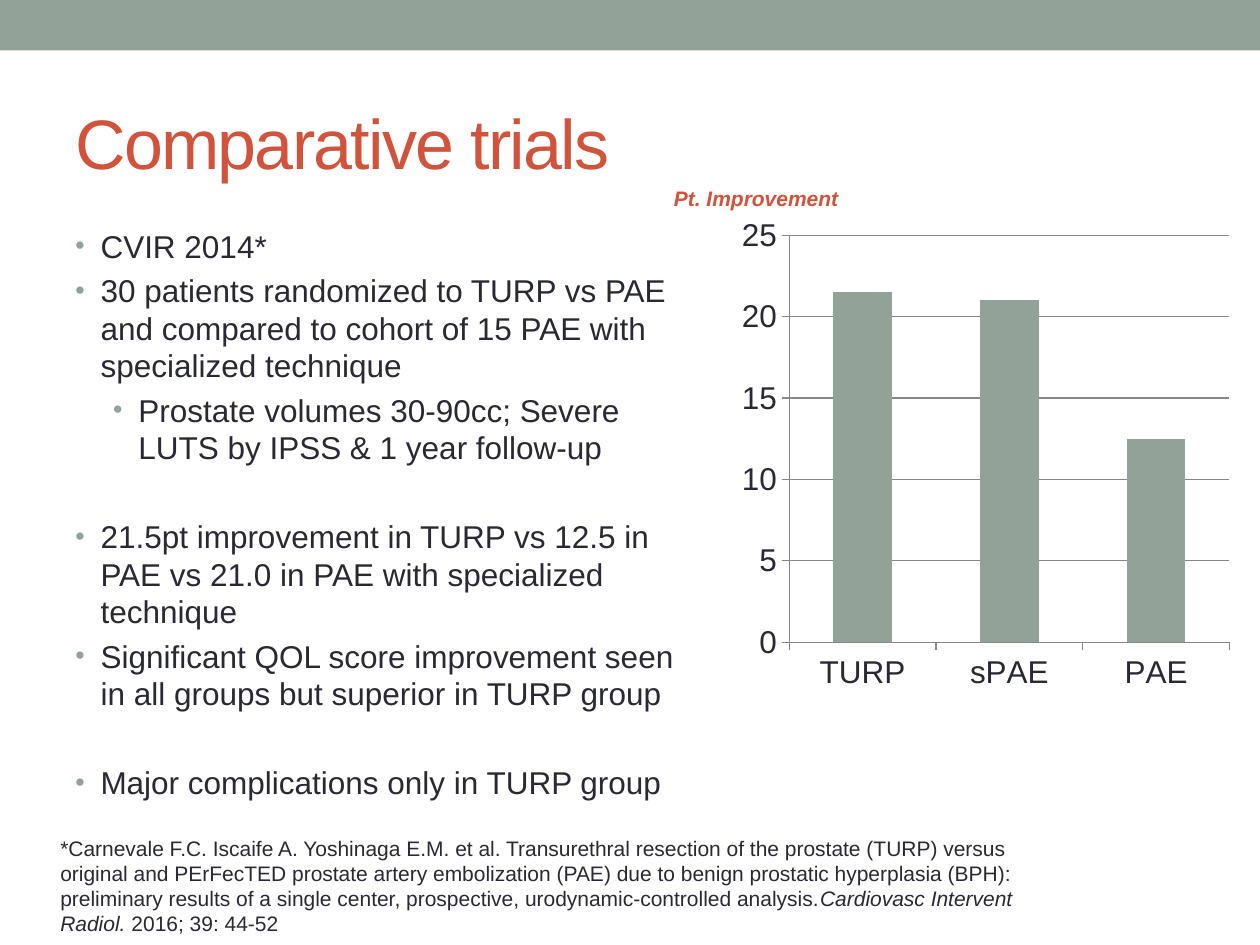
from pptx import Presentation
from pptx.chart.data import CategoryChartData
from pptx.dml.color import RGBColor
from pptx.enum.chart import XL_CHART_TYPE as ChartType, XL_TICK_MARK as Tick
from pptx.enum.shapes import MSO_SHAPE as Shape
from pptx.enum.text import MSO_ANCHOR as Anchor
from pptx.oxml import parse_xml
from pptx.oxml.ns import nsdecls, qn
from pptx.util import Inches, Pt

SAGE, RUST, INK, GRID = "93A299", "D2533C", "292934", "878787"

BULLETS = [
    (0, 3.6, "CVIR 2014*"),
    (0, 3.6, "30 patients randomized to TURP vs PAE and compared to cohort of 15 PAE with specialized technique"),
    (1, 3.6, "Prostate volumes 30-90cc; Severe LUTS by IPSS & 1 year follow-up"),
    (0, 29, "21.5pt improvement in TURP vs 12.5 in PAE vs 21.0 in PAE with specialized technique"),
    (0, 3.6, "Significant QOL score improvement seen in all groups but superior in TURP group"),
    (0, 29, "Major complications only in TURP group"),
]
CITATION = [
    ("*Carnevale F.C. Iscaife A. Yoshinaga E.M. et al. Transurethral resection of the prostate (TURP) versus "
     "original and PErFecTED prostate artery embolization (PAE) due to benign prostatic hyperplasia (BPH): "
     "preliminary results of a single center, prospective, urodynamic-controlled analysis.", False),
    ("Cardiovasc Intervent Radiol.", True),
    (" 2016; 39: 44-52", False),
]
RESULTS = {"TURP": 21.5, "sPAE": 21, "PAE": 12.5}


def rgb(value):
    """Turn a hex string into a colour."""
    return RGBColor.from_string(value)


def inches(box):
    """Convert a box of numbers to lengths."""
    return [Inches(n) for n in box]


def style_font(font, size, color=INK, **formats):
    """Apply the slide font and any further format values."""
    font.color.rgb = rgb(color)
    for name, value in {"name": "Arial", "size": Pt(size), **formats}.items():
        setattr(font, name, value)


def add_text_frame(s, box, anchor=Anchor.TOP):
    """Add a wrapping text box and return its frame."""
    tf = s.shapes.add_textbox(*inches(box)).text_frame
    tf.word_wrap = True
    tf.vertical_anchor = anchor
    return tf


def add_run(p, text, size, color=INK, **formats):
    """Add a styled run to a paragraph."""
    r = p.add_run()
    r.text = text
    style_font(r.font, size, color, **formats)
    return r


def add_band(s, box):
    """Draw the plain band across the top."""
    sp = s.shapes.add_shape(Shape.RECTANGLE, *inches(box))
    sp.shadow.inherit = False
    sp.fill.solid()
    sp.fill.fore_color.rgb = rgb(SAGE)
    sp.line.fill.background()


def add_title(s, box):
    """Add the title with tightened letter spacing."""
    p = add_text_frame(s, box, Anchor.MIDDLE).paragraphs[0]
    r = add_run(p, "Comparative trials", 40, RUST)
    r.font._element.set("spc", "-100")


def set_bullet(p, level):
    """Give a paragraph a hanging bullet for its level."""
    p.level = level
    props = p._p.get_or_add_pPr()
    props.set("marL", str(Inches(0.2 + 0.3 * level)))
    props.set("indent", str(Inches(-0.2)))
    for xml in (
        f'<a:buClr {nsdecls("a")}><a:srgbClr val="{SAGE}"/></a:buClr>',
        f'<a:buSzPct {nsdecls("a")} val="85000"/>',
        f'<a:buFont {nsdecls("a")} typeface="Arial"/>',
        f'<a:buChar {nsdecls("a")} char="•"/>',
    ):
        props.append(parse_xml(xml))


def add_findings(s, box):
    """Add the bulleted findings."""
    tf = add_text_frame(s, box)
    for i, (level, gap, text) in enumerate(BULLETS):
        p = tf.add_paragraph() if i else tf.paragraphs[0]
        p.space_before = Pt(gap)
        set_bullet(p, level)
        add_run(p, text, 18)


def add_citation(s, box):
    """Add the source reference."""
    p = add_text_frame(s, box).paragraphs[0]
    for text, italic in CITATION:
        add_run(p, text, 12, italic=italic)


def set_plot_area(chart, area):
    """Fix the inner plot area as fractions of the chart."""
    plot_area = chart._chartSpace.chart.plotArea
    for old in plot_area.findall(qn("c:layout")):
        plot_area.remove(old)
    sizes = "".join(f'<c:{k} val="{v}"/>' for k, v in zip("xywh", area))
    plot_area.insert(0, parse_xml(
        f'<c:layout {nsdecls("c")}><c:manualLayout><c:layoutTarget val="inner"/>'
        f'<c:xMode val="edge"/><c:yMode val="edge"/>{sizes}</c:manualLayout></c:layout>'))


def add_results_chart(s, box):
    """Add the column chart of point improvement."""
    data = CategoryChartData()
    data.categories = list(RESULTS)
    data.add_series("Series 1", list(RESULTS.values()))
    chart = s.shapes.add_chart(ChartType.COLUMN_STACKED, *inches(box), data).chart
    chart.has_legend = chart.has_title = False
    style_font(chart.font, 18)
    plot = chart.plots[0]
    for name, value in {"gap_width": 150, "overlap": 100, "vary_by_categories": False}.items():
        setattr(plot, name, value)
    fill = plot.series[0].format.fill
    fill.solid()
    fill.fore_color.rgb = rgb(SAGE)
    values = chart.value_axis
    for name, value in {"minimum_scale": 0, "maximum_scale": 25, "major_unit": 5}.items():
        setattr(values, name, value)
    values.has_major_gridlines = True
    for axis in (chart.category_axis, values):
        axis.major_tick_mark = Tick.OUTSIDE
        axis.minor_tick_mark = Tick.NONE
        axis.format.line.color.rgb = rgb(GRID)
    values.major_gridlines.format.line.color.rgb = rgb(GRID)
    set_plot_area(chart, (0.19, 0.05, 0.71, 0.82))


def add_chart_caption(s, box):
    """Add the caption above the chart."""
    p = add_text_frame(s, box).paragraphs[0]
    add_run(p, "Pt. Improvement", 12, RUST, bold=True, italic=True)


def main():
    """Build and save the slide."""
    prs = Presentation()
    prs.slide_width, prs.slide_height = Inches(10), Inches(7.5)
    s = prs.slides.add_slide(prs.slide_layouts[6])
    add_band(s, (0, 0, 10, 0.4))
    add_title(s, (0.5, 0.58, 9, 1.08))
    add_findings(s, (0.5, 1.75, 5, 4.95))
    add_citation(s, (0.38, 6.58, 8.08, 0.71))
    add_results_chart(s, (5.33, 1.67, 4.92, 3.94))
    add_chart_caption(s, (5.25, 1.42, 2.25, 0.3))
    prs.save("out.pptx")


if __name__ == "__main__":
    main()
